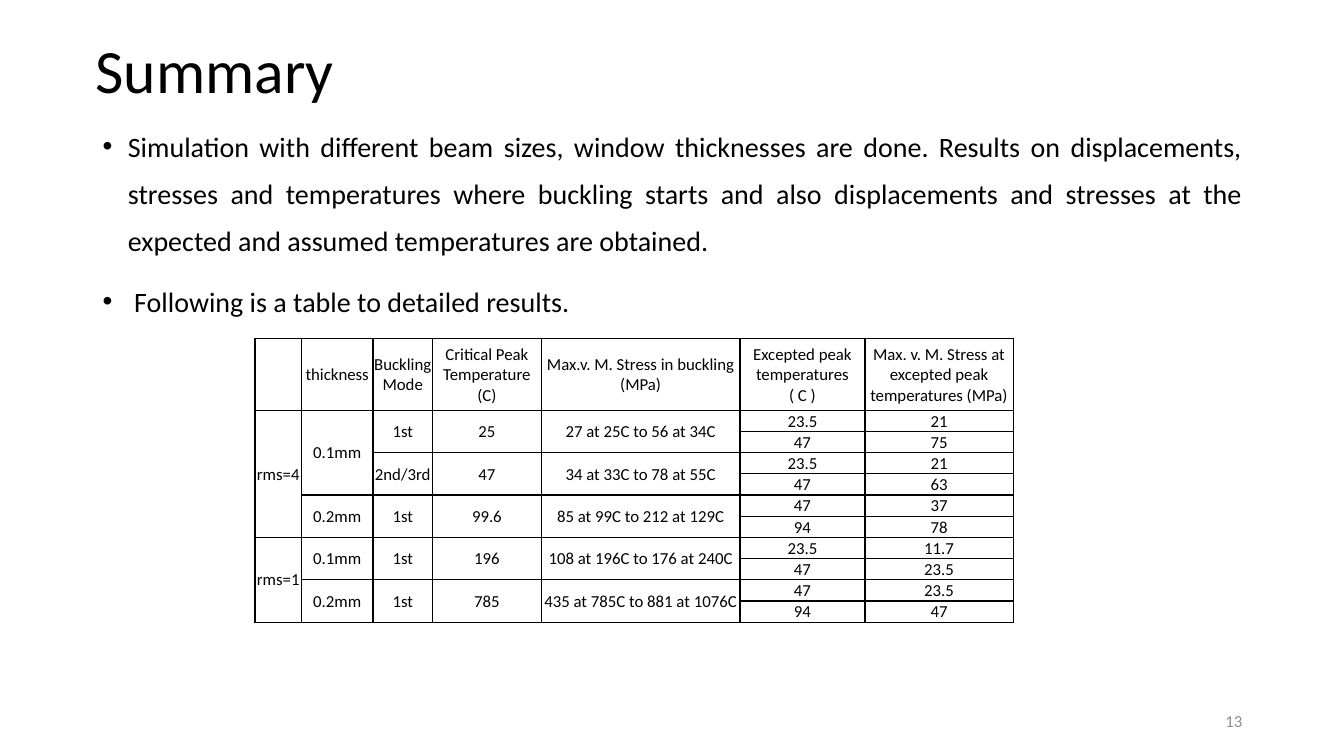
from lxml.etree import SubElement
from pptx import Presentation
from pptx.dml.color import RGBColor
from pptx.enum.text import MSO_ANCHOR, PP_ALIGN
from pptx.oxml import parse_xml
from pptx.oxml.ns import nsdecls, qn
from pptx.util import Pt

PX = 9144
BLACK = "000000"
GRAY = "8C8C8C"

HEADINGS = [
    "", "thickness", "Buckling Mode", "Critical Peak Temperature (C)",
    "Max.v. M. Stress in buckling (MPa)", "Excepted peak temperatures ( C )",
    "Max. v. M. Stress at excepted peak temperatures (MPa)",
]
RESULTS = [
    ["rms=4", "0.1mm", "1st", "25", "27 at 25C to 56 at 34C", "23.5", "21"],
    [None, None, None, None, None, "47", "75"],
    [None, None, "2nd/3rd", "47", "34 at 33C to 78 at 55C", "23.5", "21"],
    [None, None, None, None, None, "47", "63"],
    [None, "0.2mm", "1st", "99.6", "85 at 99C to 212 at 129C", "47", "37"],
    [None, None, None, None, None, "94", "78"],
    ["rms=1", "0.1mm", "1st", "196", "108 at 196C to 176 at 240C", "23.5", "11.7"],
    [None, None, None, None, None, "47", "23.5"],
    [None, "0.2mm", "1st", "785", "435 at 785C to 881 at 1076C", "47", "23.5"],
    [None, None, None, None, None, "94", "47"],
]
COLUMN_WIDTHS = [46, 71, 59, 108, 197, 124, 147]
FINDINGS = [
    "Simulation with different beam sizes, window thicknesses are done. Results on "
    "displacements, stresses and temperatures where buckling starts and also displacements "
    "and stresses at the expected and assumed temperatures are obtained.",
    " Following is a table to detailed results.",
]


def color(value):
    return RGBColor.from_string(value)


def assign(target, values):
    for name, value in values.items():
        setattr(target, name, value)


class SlideWriter:
    """Holds the text style and the current slide."""

    def __init__(self, slide, font="Calibri"):
        self.slide = slide
        self.font = font

    def style(self, paragraph, size, fill, layout):
        assign(paragraph, layout)
        assign(paragraph.font, {"name": self.font, "size": Pt(size)})
        paragraph.font.color.rgb = color(fill)

    def text(self, box, lines, size, layout, fill=BLACK, anchor=MSO_ANCHOR.TOP, bullet=None):
        frame = self.slide.shapes.add_textbox(*(side * PX for side in box)).text_frame
        assign(frame, {"word_wrap": True, "vertical_anchor": anchor})
        frame.text = "\n".join(lines)
        for paragraph in frame.paragraphs:
            self.style(paragraph, size, fill, layout)
            if bullet:
                self.bullet(paragraph, bullet)

    def bullet(self, paragraph, mark, indent=25):
        properties = paragraph._p.get_or_add_pPr()
        properties.set("marL", str(indent * PX))
        properties.set("indent", str(-indent * PX))
        SubElement(properties, qn("a:buFont")).set("typeface", "Arial")
        SubElement(properties, qn("a:buChar")).set("char", mark)

    def border(self, cell):
        properties = cell._tc.get_or_add_tcPr()
        for index, side in enumerate("LRTB"):
            properties.insert(index, parse_xml(
                f'<a:ln{side} {nsdecls("a")} w="{Pt(1)}"><a:solidFill>'
                f'<a:srgbClr val="{BLACK}"/></a:solidFill></a:ln{side}>'))

    def table(self, left, top, widths, heights, rows, size):
        grid = self.slide.shapes.add_table(
            len(rows), len(widths), left * PX, top * PX,
            sum(widths) * PX, sum(heights) * PX).table
        assign(grid, {"first_row": False, "horz_banding": False})
        for column, width in zip(grid.columns, widths):
            column.width = width * PX
        for row, height in zip(grid.rows, heights):
            row.height = height * PX
        for y, values in enumerate(rows):
            for x, value in enumerate(values):
                cell = grid.cell(y, x)
                cell.text = value or ""
                assign(cell, {"margin_left": PX, "margin_right": PX, "margin_top": PX,
                              "margin_bottom": 0, "vertical_anchor": MSO_ANCHOR.MIDDLE})
                cell.fill.background()
                self.border(cell)
                self.style(cell.text_frame.paragraphs[0], size, BLACK,
                           {"alignment": PP_ALIGN.CENTER})
        self.merge_down(grid, rows)

    def merge_down(self, grid, rows):
        for x, column in enumerate(zip(*rows)):
            starts = [y for y, value in enumerate(column) if value is not None]
            for start, following in zip(starts, starts[1:] + [len(rows)]):
                if following - start > 1:
                    grid.cell(start, x).merge(grid.cell(following - 1, x))


def main():
    deck = Presentation()
    assign(deck, {"slide_width": 1333 * PX, "slide_height": 750 * PX})
    summary = SlideWriter(deck.slides.add_slide(deck.slide_layouts[6]))
    summary.text((85, 0, 1150, 145), ["Summary"], 44, {"line_spacing": 0.9},
                 anchor=MSO_ANCHOR.MIDDLE)
    summary.text((92, 110, 1150, 219), FINDINGS, 20,
                 {"alignment": PP_ALIGN.JUSTIFY, "line_spacing": 1.4, "space_before": Pt(10)},
                 bullet="•")
    summary.text((942, 695, 300, 40), ["13"], 12, {"alignment": PP_ALIGN.RIGHT},
                 fill=GRAY, anchor=MSO_ANCHOR.MIDDLE)
    summary.table(253, 336, COLUMN_WIDTHS, [71] + [21] * len(RESULTS),
                  [HEADINGS] + RESULTS, 12)
    deck.save("out.pptx")


if __name__ == "__main__":
    main()
